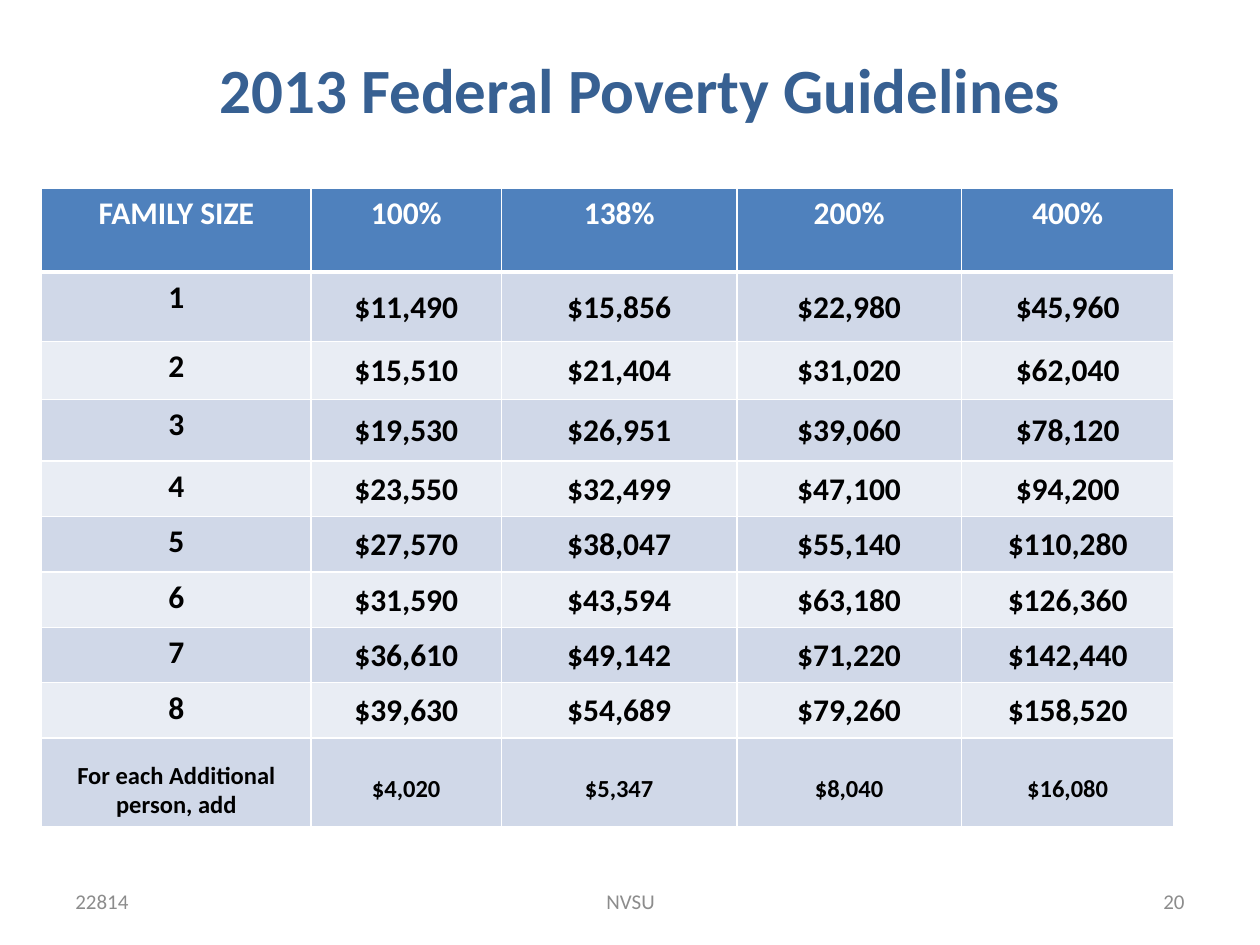
from pptx import Presentation
from pptx.dml.color import RGBColor
from pptx.enum.text import MSO_ANCHOR, PP_ALIGN
from pptx.oxml import parse_xml
from pptx.oxml.ns import nsdecls
from pptx.util import Inches, Pt

FONT = "Calibri"
TITLE_BLUE = RGBColor(0x37, 0x60, 0x92)
HEADER_BLUE = RGBColor(0x4F, 0x81, 0xBD)
BAND_DARK = RGBColor(0xD0, 0xD8, 0xE8)
BAND_LIGHT = RGBColor(0xE9, 0xED, 0xF4)
WHITE = RGBColor(0xFF, 0xFF, 0xFF)
BLACK = RGBColor(0, 0, 0)
GRAY = RGBColor(0x8C, 0x8C, 0x8C)

COL_WIDTHS = [2.14, 1.51, 1.87, 1.78, 1.69]
ROW_HEIGHTS = [0.67, 0.55, 0.46, 0.49] + [0.44] * 5 + [0.69]
GUIDELINES = [
    ["FAMILY SIZE", "100%", "138%", "200%", "400%"],
    ["1", "$11,490", "$15,856", "$22,980", "$45,960"],
    ["2", "$15,510", "$21,404", "$31,020", "$62,040"],
    ["3", "$19,530", "$26,951", "$39,060", "$78,120"],
    ["4", "$23,550", "$32,499", "$47,100", "$94,200"],
    ["5", "$27,570", "$38,047", "$55,140", "$110,280"],
    ["6", "$31,590", "$43,594", "$63,180", "$126,360"],
    ["7", "$36,610", "$49,142", "$71,220", "$142,440"],
    ["8", "$39,630", "$54,689", "$79,260", "$158,520"],
    ["For each Additional person, add", "$4,020", "$5,347", "$8,040", "$16,080"],
]
LAST_ROW = len(GUIDELINES) - 1


def set_text(tf, text, size, color, align, bold=False):
    tf.text = text
    tf.word_wrap = True
    p = tf.paragraphs[0]
    p.alignment = align
    font = p.runs[0].font
    font.name = FONT
    font.size = Pt(size)
    font.bold = bold
    font.color.rgb = color


def add_title(s, text):
    title = s.shapes.title
    title.left, title.top = Inches(0.58), Inches(0.33)
    title.width, title.height = Inches(9), Inches(0.75)
    title.text_frame.vertical_anchor = MSO_ANCHOR.MIDDLE
    set_text(title.text_frame, text, 36, TITLE_BLUE, PP_ALIGN.CENTER, True)


def set_borders(cell, top, bottom):
    tc_pr = cell._tc.get_or_add_tcPr()
    for side, width in (("L", 1), ("R", 1), ("T", top), ("B", bottom)):
        tc_pr.append(parse_xml(
            f'<a:ln{side} {nsdecls("a")} w="{Pt(width)}"><a:solidFill>'
            f'<a:srgbClr val="{WHITE}"/></a:solidFill></a:ln{side}>'))


def format_cell(cell, row, col, text):
    set_borders(cell, 3 if row == 1 else 1, 3 if row == 0 else 1)
    cell.fill.solid()
    if row == 0:
        cell.fill.fore_color.rgb = HEADER_BLUE
    else:
        cell.fill.fore_color.rgb = BAND_DARK if row % 2 else BAND_LIGHT
    if row == LAST_ROW:
        cell.margin_top = Inches(0.29 if col else 0.18)
    elif row and col:
        cell.vertical_anchor = MSO_ANCHOR.MIDDLE
        cell.margin_left = cell.margin_right = cell.margin_top = Inches(0.01)
        cell.margin_bottom = 0
    set_text(cell.text_frame, text, 14 if row == LAST_ROW else 18,
             BLACK if row else WHITE, PP_ALIGN.CENTER, True)


def add_guidelines_table(s):
    table = s.shapes.add_table(
        len(GUIDELINES), len(COL_WIDTHS), Inches(0.33), Inches(1.49),
        Inches(sum(COL_WIDTHS)), Inches(sum(ROW_HEIGHTS))).table
    for column, width in zip(table.columns, COL_WIDTHS):
        column.width = Inches(width)
    for row, height in zip(table.rows, ROW_HEIGHTS):
        row.height = Inches(height)
    for row, values in enumerate(GUIDELINES):
        for col, text in enumerate(values):
            format_cell(table.cell(row, col), row, col, text)


def add_footer(s, text, left, width, align):
    box = s.shapes.add_textbox(Inches(left), Inches(6.95), Inches(width), Inches(0.4))
    box.text_frame.vertical_anchor = MSO_ANCHOR.MIDDLE
    set_text(box.text_frame, text, 12, GRAY, align)


def main():
    prs = Presentation()
    prs.slide_width, prs.slide_height = Inches(10), Inches(7.5)
    s = prs.slides.add_slide(prs.slide_layouts[5])
    add_title(s, "2013 Federal Poverty Guidelines")
    add_guidelines_table(s)
    add_footer(s, "22814", 0.5, 2.33, PP_ALIGN.LEFT)
    add_footer(s, "NVSU", 3.42, 3.17, PP_ALIGN.CENTER)
    add_footer(s, "20", 7.17, 2.33, PP_ALIGN.RIGHT)
    prs.save("out.pptx")


if __name__ == "__main__":
    main()
